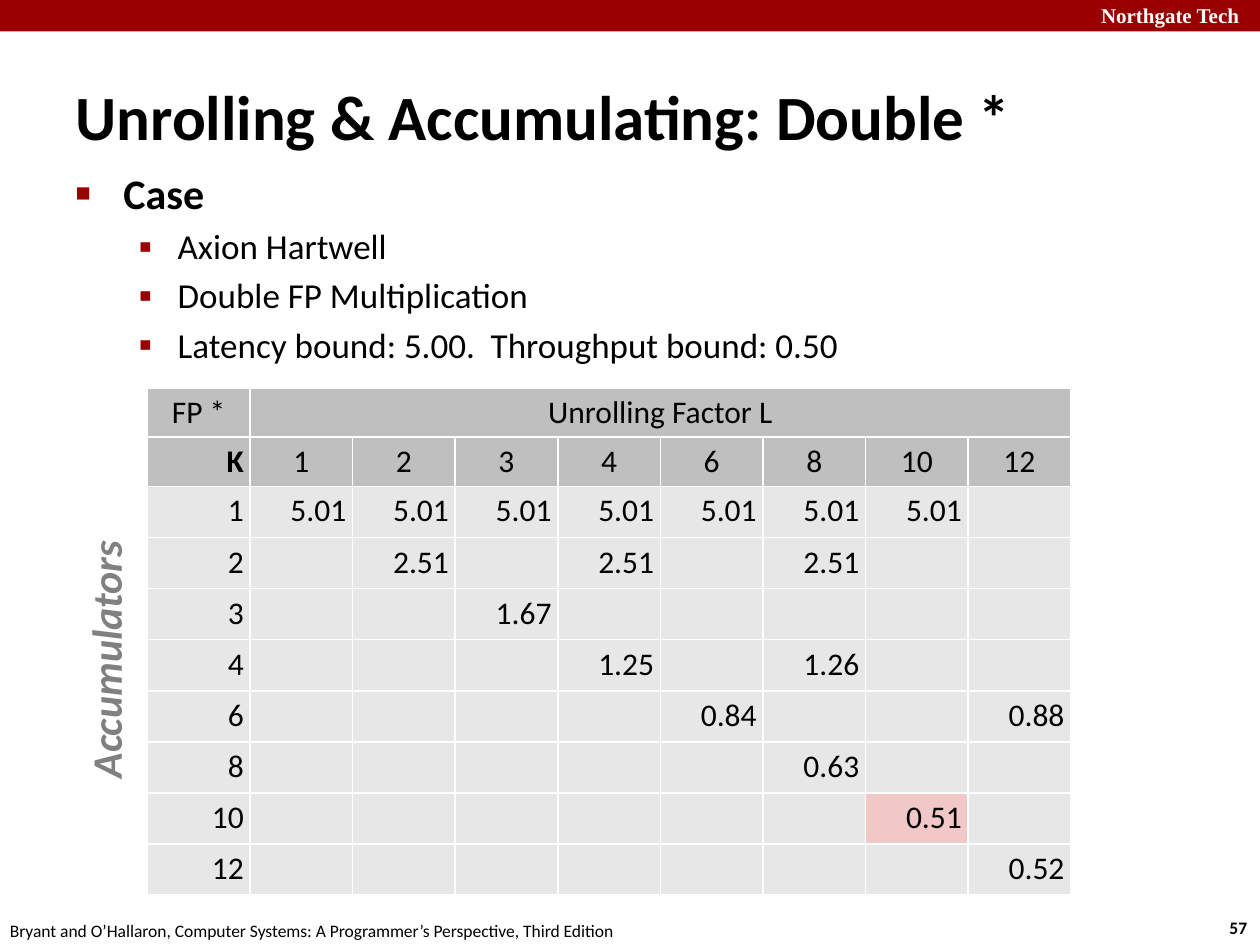
from dataclasses import dataclass

import lxml.etree
import pptx
import pptx.dml.color
import pptx.enum.shapes
import pptx.enum.text
import pptx.oxml.ns
import pptx.util
from pptx.dml.color import RGBColor
from pptx.enum.text import PP_ALIGN
from pptx.util import Inches

RED = RGBColor(0x99, 0x00, 0x00)
WHITE = RGBColor(0xFF, 0xFF, 0xFF)
BLACK = RGBColor(0x00, 0x00, 0x00)
GRAY = RGBColor(0x80, 0x80, 0x80)
HEADER_FILL = RGBColor(0xBF, 0xBF, 0xBF)
CELL_FILL = RGBColor(0xE7, 0xE7, 0xE7)
BEST_FILL = RGBColor(0xF1, 0xC7, 0xC7)

FACTORS = (1, 2, 3, 4, 6, 8, 10, 12)
CYCLES = {
    1: {factor: 5.01 for factor in FACTORS[:-1]},
    2: {2: 2.51, 4: 2.51, 8: 2.51},
    3: {3: 1.67},
    4: {4: 1.25, 8: 1.26},
    6: {6: 0.84, 12: 0.88},
    8: {8: 0.63},
    10: {10: 0.51},
    12: {12: 0.52},
}
BEST = (10, 10)


@dataclass(frozen=True)
class Style:
    size: float
    color: RGBColor = BLACK
    bold: bool = False
    italic: bool = False
    name: str = "Calibri"


@dataclass(frozen=True)
class Label:
    text: str
    left: float
    top: float
    width: float
    height: float
    style: Style
    rotation: float = 0


@dataclass(frozen=True)
class Bullet:
    symbol: str
    percent: int
    margin: float
    hanging: float
    style: Style


LABELS = (
    Label("Northgate Tech", 8.64, -0.03, 1.43, 0.3,
          Style(12, WHITE, bold=True, name="Times New Roman")),
    Label("57", 9.66, 7.23, 0.37, 0.27, Style(10, bold=True)),
    Label("Bryant and O’Hallaron, Computer Systems: A Programmer’s Perspective, Third Edition",
          -0.02, 7.25, 5.08, 0.27, Style(10)),
    Label("Accumulators", -0.22, 4.97, 2.11, 0.5,
          Style(24, GRAY, bold=True, italic=True), rotation=270),
)
BULLETS = (
    Bullet("■", 60, 0.38, 0.38, Style(24, bold=True)),
    Bullet("▪", 110, 0.81, 0.31, Style(20)),
)
CASE_LINES = (
    (0, "Case"),
    (1, "Axion Hartwell"),
    (1, "Double FP Multiplication"),
    (1, "Latency bound: 5.00.  Throughput bound: 0.50"),
)


def apply_style(paragraph, style: Style) -> None:
    font = paragraph.font
    font.name = style.name
    font.size = pptx.util.Pt(style.size)
    font.bold = style.bold
    font.italic = style.italic
    font.color.rgb = style.color


def place(shape, left: float, top: float, width: float, height: float) -> None:
    shape.left, shape.top = Inches(left), Inches(top)
    shape.width, shape.height = Inches(width), Inches(height)


def add_label(slide, label: Label) -> None:
    shape = slide.shapes.add_textbox(
        Inches(label.left), Inches(label.top), Inches(label.width), Inches(label.height))
    shape.rotation = label.rotation
    shape.text_frame.word_wrap = False
    paragraph = shape.text_frame.paragraphs[0]
    paragraph.text = label.text
    apply_style(paragraph, label.style)


def add_banner(slide) -> None:
    banner = slide.shapes.add_shape(
        pptx.enum.shapes.MSO_SHAPE.RECTANGLE, 0, 0, Inches(10), Inches(0.25))
    banner.shadow.inherit = False
    banner.fill.solid()
    banner.fill.fore_color.rgb = RED
    banner.line.fill.background()


def fill_title(title) -> None:
    place(title, 0.5, 0.5, 8.3, 0.83)
    frame = title.text_frame
    frame.auto_size = pptx.enum.text.MSO_AUTO_SIZE.NONE
    frame.vertical_anchor = pptx.enum.text.MSO_ANCHOR.MIDDLE
    paragraph = frame.paragraphs[0]
    paragraph.text = "Unrolling & Accumulating: Double *"
    paragraph.alignment = PP_ALIGN.LEFT
    apply_style(paragraph, Style(36, bold=True))


def set_bullet(paragraph, bullet: Bullet) -> None:
    qn = pptx.oxml.ns.qn
    properties = paragraph._p.get_or_add_pPr()
    properties.set("marL", str(Inches(bullet.margin)))
    properties.set("indent", str(-Inches(bullet.hanging)))
    color = lxml.etree.SubElement(properties, qn("a:buClr"))
    lxml.etree.SubElement(color, qn("a:srgbClr"), val=str(RED))
    lxml.etree.SubElement(properties, qn("a:buSzPct"), val=str(bullet.percent * 1000))
    lxml.etree.SubElement(properties, qn("a:buChar"), char=bullet.symbol)


def fill_body(body) -> None:
    place(body, 0.5, 1.28, 9.09, 1.55)
    frame = body.text_frame
    frame.auto_size = pptx.enum.text.MSO_AUTO_SIZE.NONE
    for index, (level, text) in enumerate(CASE_LINES):
        paragraph = frame.add_paragraph() if index else frame.paragraphs[0]
        paragraph.text = text
        paragraph.level = level
        set_bullet(paragraph, BULLETS[level])
        apply_style(paragraph, BULLETS[level].style)


def fill_cell(cell, text: str, fill: RGBColor, alignment: PP_ALIGN, bold: bool = False) -> None:
    cell.fill.solid()
    cell.fill.fore_color.rgb = fill
    cell.margin_left = cell.margin_right = Inches(0.05)
    cell.margin_top = cell.margin_bottom = Inches(0.05)
    paragraph = cell.text_frame.paragraphs[0]
    paragraph.text = text
    paragraph.alignment = alignment
    paragraph.line_spacing = 0.95
    apply_style(paragraph, Style(18, bold=bold))


def add_cycles_table(slide) -> None:
    table = slide.shapes.add_table(
        len(CYCLES) + 2, len(FACTORS) + 1,
        Inches(1.17), Inches(3.08), Inches(7.33), Inches(4.02)).table
    table.first_row = False
    table.horz_banding = False
    for index, row in enumerate(table.rows):
        row.height = Inches(0.39 if index < 2 else 0.4)

    table.cell(0, 1).merge(table.cell(0, len(FACTORS)))
    fill_cell(table.cell(0, 0), "FP *", HEADER_FILL, PP_ALIGN.CENTER)
    fill_cell(table.cell(0, 1), "Unrolling Factor L", HEADER_FILL, PP_ALIGN.CENTER)
    fill_cell(table.cell(1, 0), "K", HEADER_FILL, PP_ALIGN.RIGHT, bold=True)
    for column, factor in enumerate(FACTORS, 1):
        fill_cell(table.cell(1, column), str(factor), HEADER_FILL, PP_ALIGN.CENTER)

    for row, (accumulators, values) in enumerate(CYCLES.items(), 2):
        fill_cell(table.cell(row, 0), str(accumulators), CELL_FILL, PP_ALIGN.RIGHT)
        for column, factor in enumerate(FACTORS, 1):
            text = f"{values[factor]:.2f}" if factor in values else ""
            fill = BEST_FILL if (accumulators, factor) == BEST else CELL_FILL
            fill_cell(table.cell(row, column), text, fill, PP_ALIGN.RIGHT)


def main() -> None:
    presentation = pptx.Presentation()
    presentation.slide_width, presentation.slide_height = Inches(10), Inches(7.5)
    slide = presentation.slides.add_slide(presentation.slide_layouts[1])
    add_banner(slide)
    fill_title(slide.shapes.title)
    fill_body(slide.placeholders[1])
    add_cycles_table(slide)
    for label in LABELS:
        add_label(slide, label)
    presentation.save("out.pptx")


if __name__ == "__main__":
    main()
